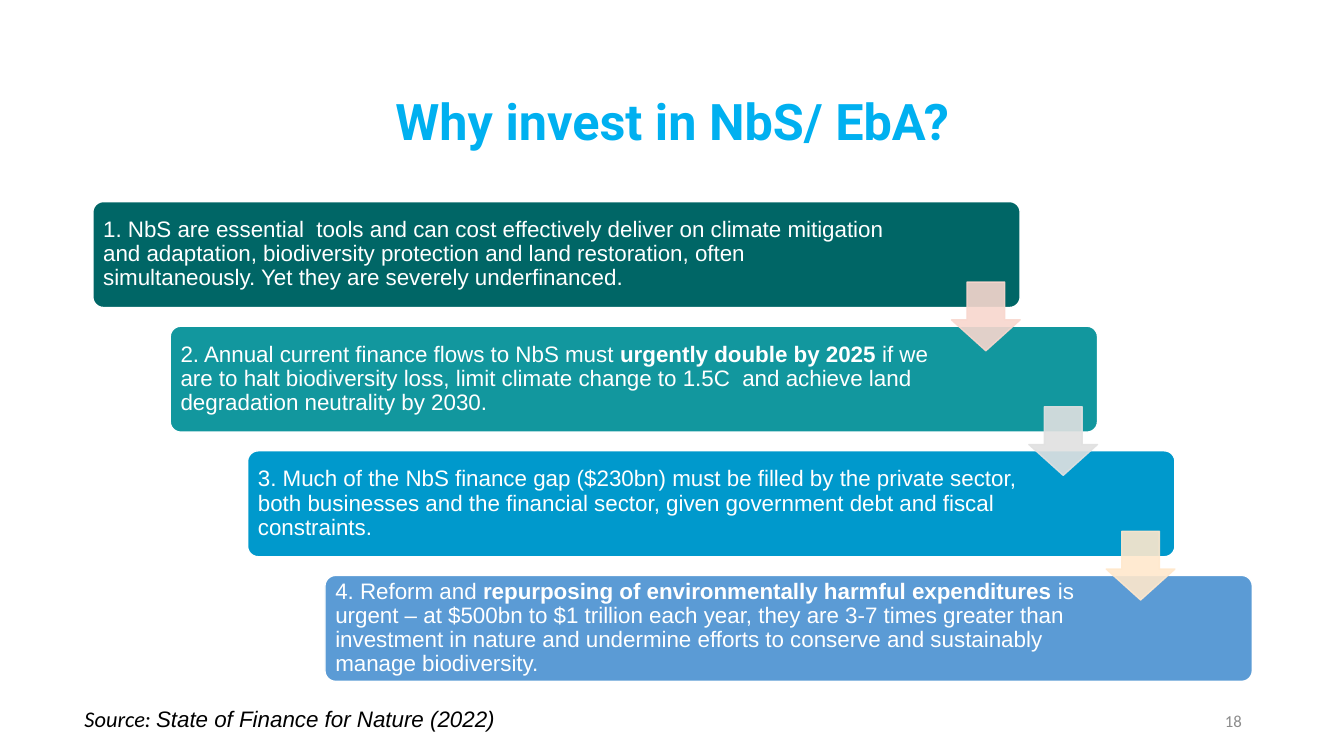
import pptx
import pptx.util
import pptx.dml.color
import pptx.enum.shapes
import pptx.enum.text
from lxml import etree

Cm, Pt = pptx.util.Cm, pptx.util.Pt
SHAPE = pptx.enum.shapes.MSO_SHAPE
ALIGN = pptx.enum.text.PP_ALIGN
ANCHOR = pptx.enum.text.MSO_ANCHOR

# Content: each run is (text, format overrides)
TITLE = [("Why invest in NbS/ EbA?", {})]
PAGE = [("18", {})]
SOURCE = [("Source: ", {"font": "Calibri"}),
          ("State of Finance for Nature (2022)", {})]
BOLD = {"bold": True}
# (bar colour, text width in cm, runs)
REASONS = [
    ("006666", 20.27, [
        ("1. NbS are essential  tools and can cost effectively deliver on climate "
         "mitigation and adaptation, biodiversity protection and land restoration, "
         "often simultaneously. Yet they are severely underfinanced.", {})]),
    ("12979E", 19.53, [
        ("2. Annual current finance flows to NbS must ", {}),
        ("urgently double by 2025 ", BOLD),
        ("if we are to halt biodiversity loss, limit climate change to 1.5C  and "
         "achieve land degradation neutrality by 2030.", {})]),
    ("0099CC", 19.55, [
        ("3. Much of the NbS finance gap ($230bn) must be filled by the private "
         "sector, both businesses and the financial sector, given government debt "
         "and fiscal constraints.", {})]),
    ("5B9BD5", 19.53, [
        ("4. Reform and ", {}),
        ("repurposing of environmentally harmful expenditures ", BOLD),
        ("is urgent – at $500bn to $1 trillion each year, they are 3-7 times greater "
         "than investment in nature and undermine efforts to conserve and "
         "sustainably manage biodiversity.", {})]),
]
ARROW_COLOURS = ["F8D7CE", "E1E1E1", "FFE8CC"]

# Staircase layout, in cm
LEFT, TOP = 2.34, 5.08
STEP_X, STEP_Y = 1.95, 3.14
BAR_W, BAR_H = 23.37, 2.67
TEXT_GAP = 0.08
ARROW_SIZE, ARROW_DROP = 1.73, 2.03

deck = pptx.Presentation()
deck.slide_width, deck.slide_height = Cm(33.87), Cm(19.05)
slide = deck.slides.add_slide(deck.slide_layouts[6])


def paint(colour_format, hex_colour, opacity=100):
    colour_format.rgb = pptx.dml.color.RGBColor.from_string(hex_colour)
    if opacity < 100:
        for srgb in colour_format._xFill.iter(pptx.oxml.ns.qn("a:srgbClr")):
            alpha = etree.SubElement(srgb, pptx.oxml.ns.qn("a:alpha"))
            alpha.set("val", str(opacity * 1000))


def add_text(runs, left, top, width, height, *, size=16, font="Arial",
             colour="FFFFFF", bold=False, italic=False, align=ALIGN.LEFT,
             anchor=ANCHOR.MIDDLE, inset=None, spacing=1.0):
    frame = slide.shapes.add_textbox(
        Cm(left), Cm(top), Cm(width), Cm(height)).text_frame
    frame.word_wrap = True
    frame.vertical_anchor = anchor
    if inset is not None:
        frame.margin_left = frame.margin_right = Cm(inset)
        frame.margin_top = frame.margin_bottom = Cm(inset)
    paragraph = frame.paragraphs[0]
    paragraph.alignment = align
    paragraph.line_spacing = spacing
    for text, own in runs:
        run = paragraph.add_run()
        run.text = text
        run.font.size = Pt(size)
        run.font.name = own.get("font", font)
        run.font.bold = own.get("bold", bold)
        run.font.italic = italic
        paint(run.font.color, colour)


def add_block(kind, adjustments, left, top, width, height, fill, line, opacity=100):
    block = slide.shapes.add_shape(kind, Cm(left), Cm(top), Cm(width), Cm(height))
    block.shadow.inherit = False
    for index, value in enumerate(adjustments):
        block.adjustments[index] = value
    block.fill.solid()
    paint(block.fill.fore_color, fill, opacity)
    block.line.fill.solid()
    paint(block.line.fill.fore_color, line, opacity)
    block.line.width = Pt(1)


# Title and page number
add_text(TITLE, 2.34, 1.55, 29.21, 3.15, size=36, font="Roboto",
         colour="00B0F0", bold=True, align=ALIGN.CENTER, spacing=0.9)
add_text(PAGE, 23.93, 17.65, 7.62, 1.02, size=12, font="Calibri",
         colour="8C8C8C", align=ALIGN.RIGHT)

# Bars with their reasons
for step, (colour, text_width, reason) in enumerate(REASONS):
    left, top = LEFT + step * STEP_X, TOP + step * STEP_Y
    add_block(SHAPE.ROUNDED_RECTANGLE, [0.1], left, top, BAR_W, BAR_H,
              colour, "FFFFFF")
    add_text(reason, left + TEXT_GAP, top + TEXT_GAP, text_width,
             BAR_H - 2 * TEXT_GAP, inset=0.18, spacing=0.9)

# Arrows, flush with the right end of each bar they leave
for step, colour in enumerate(ARROW_COLOURS):
    add_block(SHAPE.DOWN_ARROW, [0.55, 0.45],
              LEFT + step * STEP_X + BAR_W - ARROW_SIZE,
              TOP + step * STEP_Y + ARROW_DROP,
              ARROW_SIZE, ARROW_SIZE, colour, colour, opacity=90)

# Source line
add_text(SOURCE, 1.88, 17.65, 12.62, 0.94, colour="000000", italic=True,
         anchor=ANCHOR.TOP)

deck.save("out.pptx")
